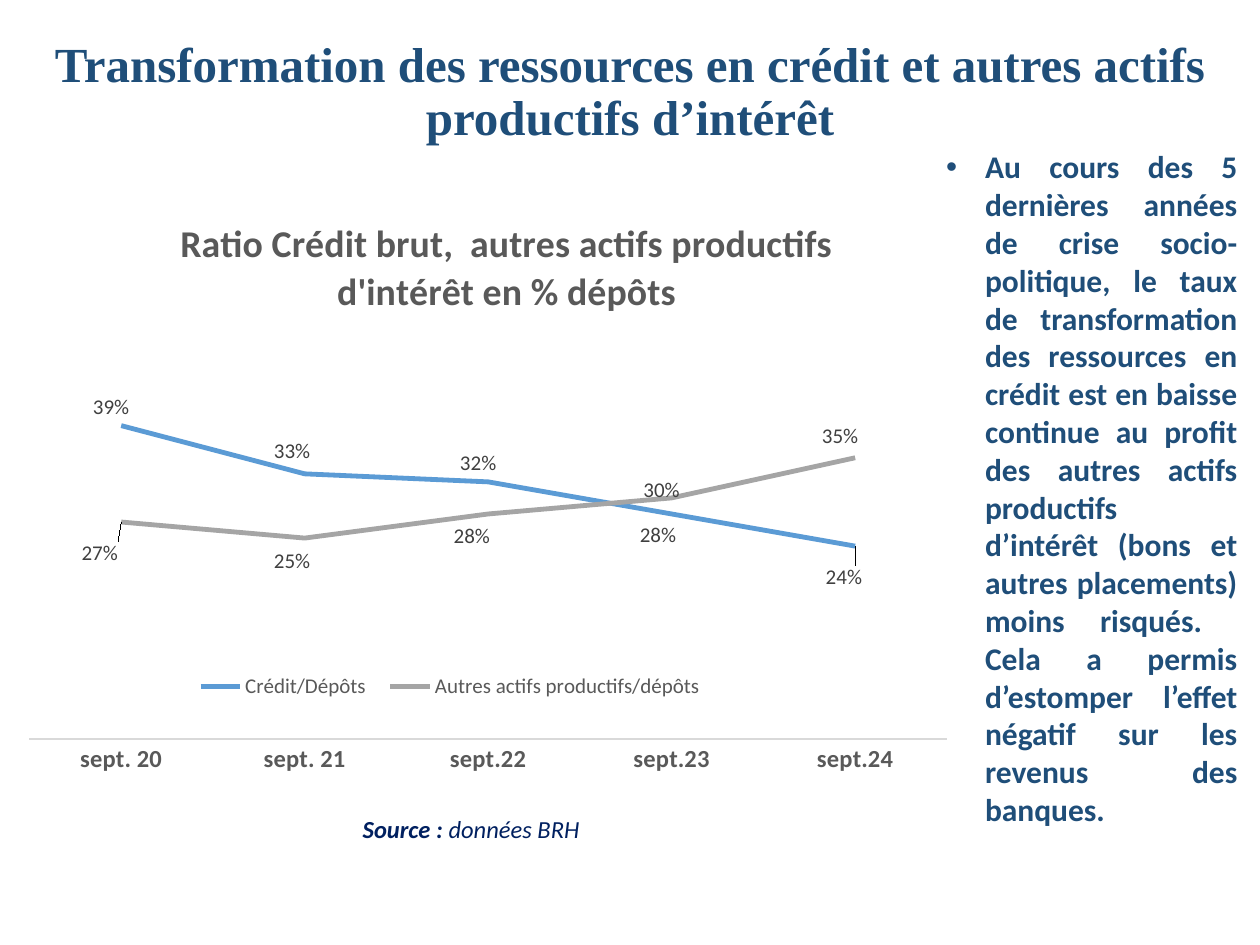
from lxml.etree import SubElement, fromstring
from pptx import Presentation
from pptx.chart.data import CategoryChartData
from pptx.dml.color import RGBColor
from pptx.enum.chart import (XL_CHART_TYPE, XL_LABEL_POSITION as LabelPos,
                             XL_LEGEND_POSITION as LegendPos, XL_TICK_MARK as Tick)
from pptx.enum.text import MSO_ANCHOR as Anchor, PP_ALIGN as Align
from pptx.oxml.ns import nsdecls, qn
from pptx.util import Inches, Pt

# Content
COLORS = {"heading": "1F4E79", "source": "002060", "gray": "595959",
          "label": "404040", "axis": "D9D9D9"}
TITLE = "Transformation des ressources en crédit et autres actifs productifs d’intérêt"
COMMENT = ("Au cours des 5 dernières années de crise socio-politique, le taux de "
           "transformation des ressources en crédit est en baisse continue au profit des "
           "autres actifs productifs d’intérêt (bons et autres placements) moins risqués.  "
           "Cela a permis d’estomper l’effet négatif sur les revenus des banques.")
CHART_TITLE = "Ratio Crédit brut,  autres actifs productifs d'intérêt en % dépôts"
CATEGORIES = ["sept. 20", "sept. 21", "sept.22", "sept.23", "sept.24"]
# Name, colour, values, label shifts from the points in inches
SERIES = [
    ("Crédit/Dépôts", "5B9BD5", [0.39, 0.33, 0.32, 0.28, 0.24],
     [(-0.08, -0.15), (-0.1, -0.18), (-0.08, -0.15), (-0.11, 0.17), (-0.09, 0.25)]),
    ("Autres actifs productifs/dépôts", "A5A5A5", [0.27, 0.25, 0.28, 0.3, 0.35],
     [(-0.17, 0.25), (-0.1, 0.18), (-0.13, 0.18), (-0.08, -0.06), (-0.12, -0.17)]),
]
CHART_BOX = (0.09, 1.42, 7.57, 4.88)


def style(font, size, color, bold=False, italic=False, name="Calibri"):
    font.size, font.name, font.bold, font.italic = Pt(size), name, bold, italic
    font.color.rgb = RGBColor.from_string(color)


def add_text(page, text, at, align=Align.LEFT, anchor=Anchor.TOP, **form):
    box = page.shapes.add_textbox(*map(Inches, at))
    box.text_frame.word_wrap = True
    box.text_frame.vertical_anchor = anchor
    para = box.text_frame.paragraphs[0]
    para.alignment = align
    span = para.add_run()
    span.text = text
    style(span.font, **form)
    return para


def manual_layout(x, y, w=None, h=None, target=None, mode="edge"):
    parts = [f'<c:layoutTarget val="{target}"/>'] if target else []
    if mode == "edge":
        parts += ['<c:xMode val="edge"/>', '<c:yMode val="edge"/>']
    sizes = {"x": x, "y": y, "w": w, "h": h}
    parts += [f'<c:{key} val="{value:.4f}"/>' for key, value in sizes.items()
              if value is not None]
    return fromstring(f'<c:layout {nsdecls("c")}><c:manualLayout>{"".join(parts)}'
                      '</c:manualLayout></c:layout>')


def place(element, layout, after=None):
    for old in element.findall(qn("c:layout")):
        element.remove(old)
    before = element.find(qn(after)) if after else None
    element.insert(0 if before is None else element.index(before) + 1, layout)


deck = Presentation()
deck.slide_width, deck.slide_height = Inches(10), Inches(7.5)
page = deck.slides.add_slide(deck.slide_layouts[6])

# Heading
heading = add_text(page, TITLE, (0.11, 0.06, 9.78, 1.36), Align.CENTER, Anchor.MIDDLE,
                   size=28, color=COLORS["heading"], bold=True, name="Times New Roman")
heading.line_spacing = 0.9

# Line chart
data = CategoryChartData(number_format="0%")
data.categories = CATEGORIES
for name, _, values, _ in SERIES:
    data.add_series(name, values)
chart = page.shapes.add_chart(XL_CHART_TYPE.LINE, *map(Inches, CHART_BOX), data).chart
style(chart.font, 10, "000000")
place(chart.plots[0]._element.getparent(),
      manual_layout(0.019, 0.323, 0.962, 0.588, target="inner"))

# Chart title and legend
chart.has_title = True
chart.chart_title.text_frame.text = CHART_TITLE
style(chart.chart_title.text_frame.paragraphs[0].runs[0].font, 21.6, COLORS["gray"], True)
place(chart.chart_title._element, manual_layout(0.17, 0.05), after="c:tx")
chart.has_legend = True
legend = chart.legend
legend.position, legend.include_in_layout = LegendPos.BOTTOM, False
style(legend.font, 12, COLORS["gray"])
place(legend._element, manual_layout(0.18, 0.79, 0.56, 0.07), after="c:legendPos")

# Axes
months, ratios = chart.category_axis, chart.value_axis
months.major_tick_mark = months.minor_tick_mark = Tick.NONE
months.format.line.color.rgb = RGBColor.from_string(COLORS["axis"])
months.format.line.width = Pt(1)
style(months.tick_labels.font, 14, COLORS["gray"], True)
ratios.minimum_scale, ratios.maximum_scale = 0, 0.45
ratios.has_major_gridlines = False
ratios.visible = False

# Lines and value labels
chart.plots[0].vary_by_categories = False
for series, (_, color, _, shifts) in zip(chart.plots[0].series, SERIES):
    series.smooth = False
    series.format.line.color.rgb = RGBColor.from_string(color)
    series.format.line.width = Pt(2.75)
    labels = series.data_labels
    labels.show_value = True
    labels.number_format, labels.number_format_is_linked = "0%", False
    labels.position = LabelPos.CENTER
    style(labels.font, 12, COLORS["label"])
    for index in range(len(shifts)):
        label = series.points[index].data_label
        label.position = LabelPos.CENTER
        style(label.font, 12, COLORS["label"])
    for element, (dx, dy) in zip(labels._element.findall(qn("c:dLbl")), shifts):
        place(element, manual_layout(dx / CHART_BOX[2], dy / CHART_BOX[3], mode="factor"),
              after="c:idx")

# Comment with bullet
comment = add_text(page, COMMENT, (7.41, 1.12, 2.51, 5.55), Align.JUSTIFY,
                   size=18, color=COLORS["heading"], bold=True)
props = comment._p.get_or_add_pPr()
props.set("marL", str(Inches(0.31)))
props.set("indent", str(Inches(-0.31)))
SubElement(props, qn("a:buFont"), typeface="Arial")
SubElement(props, qn("a:buChar"), char="•")

# Source line
source = add_text(page, "Source : ", (2.78, 6.41, 3.64, 0.34),
                  size=14, color=COLORS["source"], bold=True, italic=True)
span = source.add_run()
span.text = "données BRH"
style(span.font, 14, COLORS["source"], italic=True)

deck.save("out.pptx")
